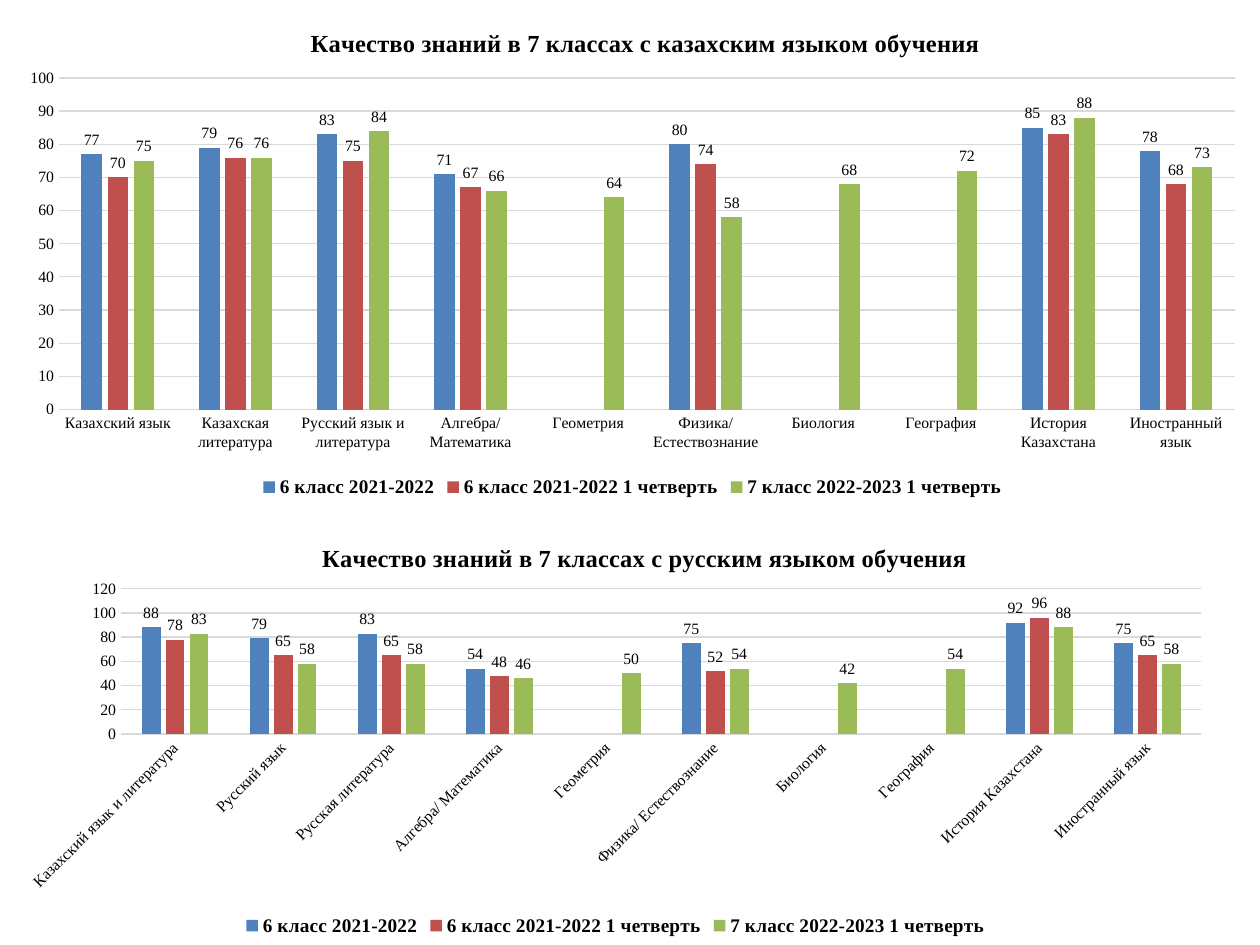
from lxml import etree
from pptx import Presentation
from pptx import util as u
from pptx.chart.data import CategoryChartData
from pptx.dml.color import RGBColor
from pptx.enum import chart as ch
from pptx.oxml.ns import qn

BLACK = RGBColor(0, 0, 0)
GRID = RGBColor(0xD9, 0xD9, 0xD9)
BARS = [RGBColor(0x4F, 0x81, 0xBD), RGBColor(0xC0, 0x50, 0x4D),
        RGBColor(0x9B, 0xBB, 0x59)]
TERMS = ["6 класс 2021-2022", "6 класс 2021-2022 1 четверть",
         "7 класс 2022-2023 1 четверть"]
SHARED = ["Алгебра/ Математика", "Геометрия", "Физика/ Естествознание",
          "Биология", "География", "История Казахстана", "Иностранный язык"]
NA = None

CHARTS = [
    {"title": "Качество знаний в 7 классах с русским языком обучения",
     "box": (0.04, 4.08, 9.69, 3.39), "top": 120, "step": 20, "turn": -45,
     "head": {"x": 0.256, "y": 0.055},
     "plot": {"x": 0.095, "y": 0.175, "w": 0.885, "h": 0.34},
     "cats": ["Казахский язык и литература", "Русский язык",
              "Русская литература"] + SHARED,
     "rows": [(88, 79, 83, 54, NA, 75, NA, NA, 92, 75),
              (78, 65, 65, 48, NA, 52, NA, NA, 96, 65),
              (83, 58, 58, 46, 50, 54, 42, 54, 88, 58)]},
    {"title": "Качество знаний в 7 классах с казахским языком обучения",
     "box": (0.04, 0, 9.96, 3.99), "top": 100, "step": 10, "turn": 0,
     "head": {"x": 0.24, "y": 0.046},
     "plot": {"x": 0.043, "y": 0.155, "w": 0.937, "h": 0.66},
     "cats": ["Казахский язык", "Казахская литература",
              "Русский язык и литература"] + SHARED,
     "rows": [(77, 79, 83, 71, NA, 80, NA, NA, 85, 78),
              (70, 76, 75, 67, NA, 74, NA, NA, 83, 68),
              (75, 76, 84, 66, 64, 58, 68, 72, 88, 73)]},
]


def style(font, size, bold=False):
    look = {"name": "Times New Roman", "size": u.Pt(size), "bold": bold}
    for key, val in look.items():
        setattr(font, key, val)
    font.color.rgb = BLACK


def place(part, spot, shares):
    """Pin a chart part at shares of the chart's width and height."""
    for old in part.findall(qn("c:layout")):
        part.remove(old)
    layout = etree.Element(qn("c:layout"))
    manual = etree.SubElement(layout, qn("c:manualLayout"))
    modes = {"xMode": "edge", "yMode": "edge"}
    if "w" in shares:
        modes = {"layoutTarget": "inner", **modes}
    for key, val in {**modes, **shares}.items():
        etree.SubElement(manual, qn("c:" + key)).set("val", str(val))
    part.insert(spot, layout)


deck = Presentation()
deck.slide_width, deck.slide_height = u.Inches(10), u.Inches(7.5)
slide = deck.slides.add_slide(deck.slide_layouts[6])

for item in CHARTS:
    data = CategoryChartData(number_format="0")
    data.categories = item["cats"]
    for term, row in zip(TERMS, item["rows"]):
        data.add_series(term, row)
    chart = slide.shapes.add_chart(
        ch.XL_CHART_TYPE.COLUMN_CLUSTERED,
        *[u.Inches(n) for n in item["box"]], data).chart
    style(chart.font, 10)

    chart.has_title = True
    title = chart.chart_title
    title.include_in_layout = False
    title.text_frame.text = item["title"]
    style(title.text_frame.paragraphs[0].runs[0].font, 14, True)
    place(title._element, 1, item["head"])
    place(chart._chartSpace.chart.plotArea, 0, item["plot"])

    chart.has_legend = True
    chart.legend.position = ch.XL_LEGEND_POSITION.BOTTOM
    chart.legend.include_in_layout = False
    style(chart.legend.font, 11, True)

    cat, val = chart.category_axis, chart.value_axis
    for axis in (cat, val):
        axis.major_tick_mark = axis.minor_tick_mark = ch.XL_TICK_MARK.NONE
        style(axis.tick_labels.font, 9)
    turn = cat._element.find(qn("c:txPr")).find(qn("a:bodyPr"))
    turn.set("rot", str(item["turn"] * 60000))
    val.minimum_scale, val.maximum_scale = 0, item["top"]
    val.major_unit = item["step"]
    val.tick_labels.number_format = "0"
    val.tick_labels.number_format_is_linked = False
    val.has_major_gridlines = True
    val.format.line.fill.background()
    for line in (cat.format.line, val.major_gridlines.format.line):
        line.color.rgb = GRID
        line.width = u.Pt(0.75)

    plot = chart.plots[0]
    plot.gap_width, plot.overlap = 219, -27
    plot.vary_by_categories = False
    for bar, color in zip(plot.series, BARS):
        bar.format.fill.solid()
        bar.format.fill.fore_color.rgb = color
        bar.invert_if_negative = False
        tags = bar.data_labels
        look = {"show_value": True, "number_format": "0",
                "number_format_is_linked": False,
                "position": ch.XL_LABEL_POSITION.OUTSIDE_END}
        for key, fmt in look.items():
            setattr(tags, key, fmt)
        style(tags.font, 9)

deck.save("out.pptx")
